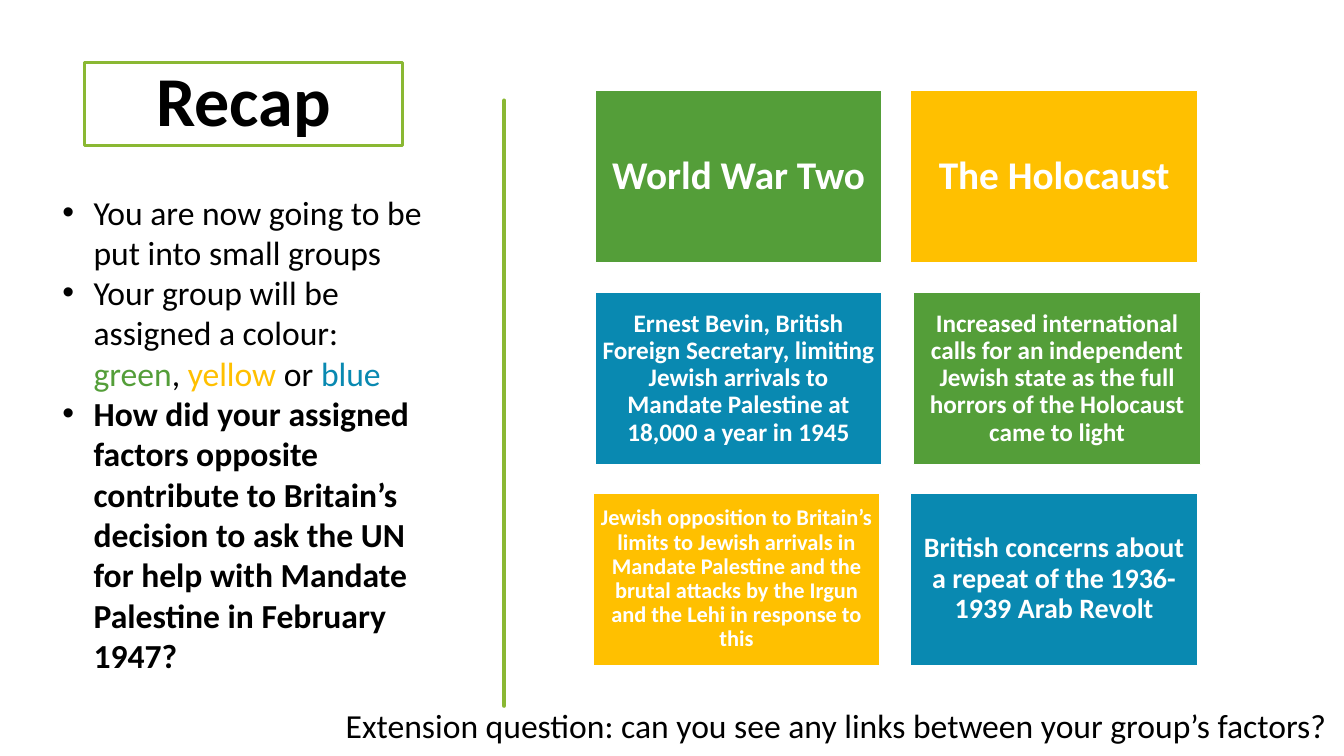
"""Build the recap slide with its coloured factor cards."""
from dataclasses import dataclass

import pptx
import pptx.dml.color
import pptx.enum.shapes
import pptx.enum.text
import pptx.util
from lxml import etree

Inches = pptx.util.Inches
Pt = pptx.util.Pt

COLOURS: dict[str, str] = {
    "black": "000000",
    "white": "FFFFFF",
    "lime": "8AB833",
    "green": "549E39",
    "yellow": "FFC000",
    "blue": "0989B1",
}
FONT = "Calibri"
CARD_WIDTH, CARD_HEIGHT = 2.85, 1.71


@dataclass
class Card:
    left: float
    top: float
    colour: str
    text: str
    size: float
    inset: float = 0.07


@dataclass
class Span:
    text: str
    colour: str = "black"
    bold: bool = False


CARDS = [
    Card(5.9, 0.9, "green", "World War Two", 28, 0.12),
    Card(9.03, 0.9, "yellow", "The Holocaust", 28, 0.12),
    Card(5.9, 2.9, "blue", "Ernest Bevin, British Foreign Secretary, limiting Jewish "
         "arrivals to Mandate Palestine at 18,000 a year in 1945", 18),
    Card(5.88, 4.89, "yellow", "Jewish opposition to Britain’s limits to Jewish arrivals in "
         "Mandate Palestine and the brutal attacks by the Irgun and the Lehi in response "
         "to this", 16),
    Card(9.06, 2.9, "green", "Increased international calls for an independent Jewish state "
         "as the full horrors of the Holocaust came to light", 18),
    Card(9.03, 4.89, "blue", "British concerns about a repeat of the 1936-1939 Arab Revolt",
         20, 0.08),
]

INSTRUCTIONS = [
    [Span("You are now going to be put into small groups")],
    [Span("Your group will be assigned a colour: "), Span("green", "green"), Span(", "),
     Span("yellow ", "yellow"), Span("or "), Span("blue", "blue")],
    [Span("How did your assigned factors opposite contribute to Britain’s decision to ask "
          "the UN for help with Mandate Palestine in February 1947?", bold=True)],
]

DIVIDER_RIGHT = [(4.75, 0.84), (4.76, 1.2), (4.74, 1.7), (4.75, 2.26), (4.75, 2.94),
                 (4.76, 3.4), (4.75, 3.9), (4.76, 4.3), (4.74, 4.7), (4.76, 5.4),
                 (4.75, 5.9), (4.75, 6.76)]
DIVIDER_LEFT = [(4.73, 6.76), (4.73, 6.13), (4.73, 5.57), (4.72, 4.77), (4.73, 4.15),
                (4.73, 3.35), (4.73, 2.5), (4.72, 1.7), (4.74, 1.2), (4.73, 0.84)]


def rgb(colour: str) -> pptx.dml.color.RGBColor:
    return pptx.dml.color.RGBColor.from_string(COLOURS[colour])


def style_font(font, size: float, colour: str, bold: bool = False) -> None:
    font.name = FONT
    font.size = Pt(size)
    font.bold = bold
    font.color.rgb = rgb(colour)


def style_line(shape, colour: str, width: float) -> None:
    shape.shadow.inherit = False
    shape.line.color.rgb = rgb(colour)
    shape.line.width = Pt(width)


def add_panel(page, left: float, top: float, width: float, height: float):
    return page.shapes.add_shape(pptx.enum.shapes.MSO_SHAPE.RECTANGLE, Inches(left),
                                 Inches(top), Inches(width), Inches(height))


def set_centred_text(panel, text: str, size: float, colour: str, inset: float) -> None:
    frame = panel.text_frame
    frame.text = text
    frame.word_wrap = True
    frame.vertical_anchor = pptx.enum.text.MSO_ANCHOR.MIDDLE
    frame.margin_left = frame.margin_right = Inches(inset)
    frame.margin_top = frame.margin_bottom = Inches(inset)
    para = frame.paragraphs[0]
    para.alignment = pptx.enum.text.PP_ALIGN.CENTER
    para.line_spacing = 0.9
    style_font(para.runs[0].font, size, colour, bold=True)


def add_title(page) -> None:
    panel = add_panel(page, 0.84, 0.62, 3.15, 0.82)
    panel.fill.background()
    style_line(panel, "lime", 2.25)
    set_centred_text(panel, "Recap", 50, "black", 0.05)


def add_divider(page) -> None:
    first, *rest = DIVIDER_RIGHT + DIVIDER_LEFT
    builder = page.shapes.build_freeform(*first, scale=Inches(1))
    builder.add_line_segments(rest, close=True)
    divider = builder.convert_to_shape()
    divider.fill.solid()
    divider.fill.fore_color.rgb = rgb("lime")
    style_line(divider, "lime", 3.25)
    etree.SubElement(divider.line._get_or_add_ln(), pptx.oxml.ns.qn("a:round"))


def add_card(page, card: Card) -> None:
    panel = add_panel(page, card.left, card.top, CARD_WIDTH, CARD_HEIGHT)
    panel.fill.solid()
    panel.fill.fore_color.rgb = rgb(card.colour)
    style_line(panel, "white", 1)
    set_centred_text(panel, card.text, card.size, "white", card.inset)


def add_text_box(page, left: float, top: float, width: float, height: float):
    box = page.shapes.add_textbox(Inches(left), Inches(top), Inches(width), Inches(height))
    box.text_frame.word_wrap = True
    return box.text_frame


def add_bullet(para) -> None:
    properties = para._p.get_or_add_pPr()
    properties.set("marL", str(Inches(0.31)))
    properties.set("indent", str(Inches(-0.31)))
    etree.SubElement(properties, pptx.oxml.ns.qn("a:buFont"), typeface="Arial")
    etree.SubElement(properties, pptx.oxml.ns.qn("a:buChar"), char="•")


def add_instructions(page) -> None:
    frame = add_text_box(page, 0.52, 1.85, 3.81, 5.76)
    for index, spans in enumerate(INSTRUCTIONS):
        para = frame.add_paragraph() if index else frame.paragraphs[0]
        add_bullet(para)
        for span in spans:
            run = para.add_run()
            run.text = span.text
            style_font(run.font, 24, span.colour, span.bold)


def add_extension(page) -> None:
    frame = add_text_box(page, 3.33, 6.94, 10.36, 0.5)
    frame.text = "Extension question: can you see any links between your group’s factors?"
    style_font(frame.paragraphs[0].runs[0].font, 24, "black")


def main() -> None:
    deck = pptx.Presentation()
    deck.slide_width, deck.slide_height = Inches(13.33), Inches(7.5)
    page = deck.slides.add_slide(deck.slide_layouts[6])
    add_title(page)
    add_divider(page)
    add_instructions(page)
    for card in CARDS:
        add_card(page, card)
    add_extension(page)
    deck.save("out.pptx")


if __name__ == "__main__":
    main()
